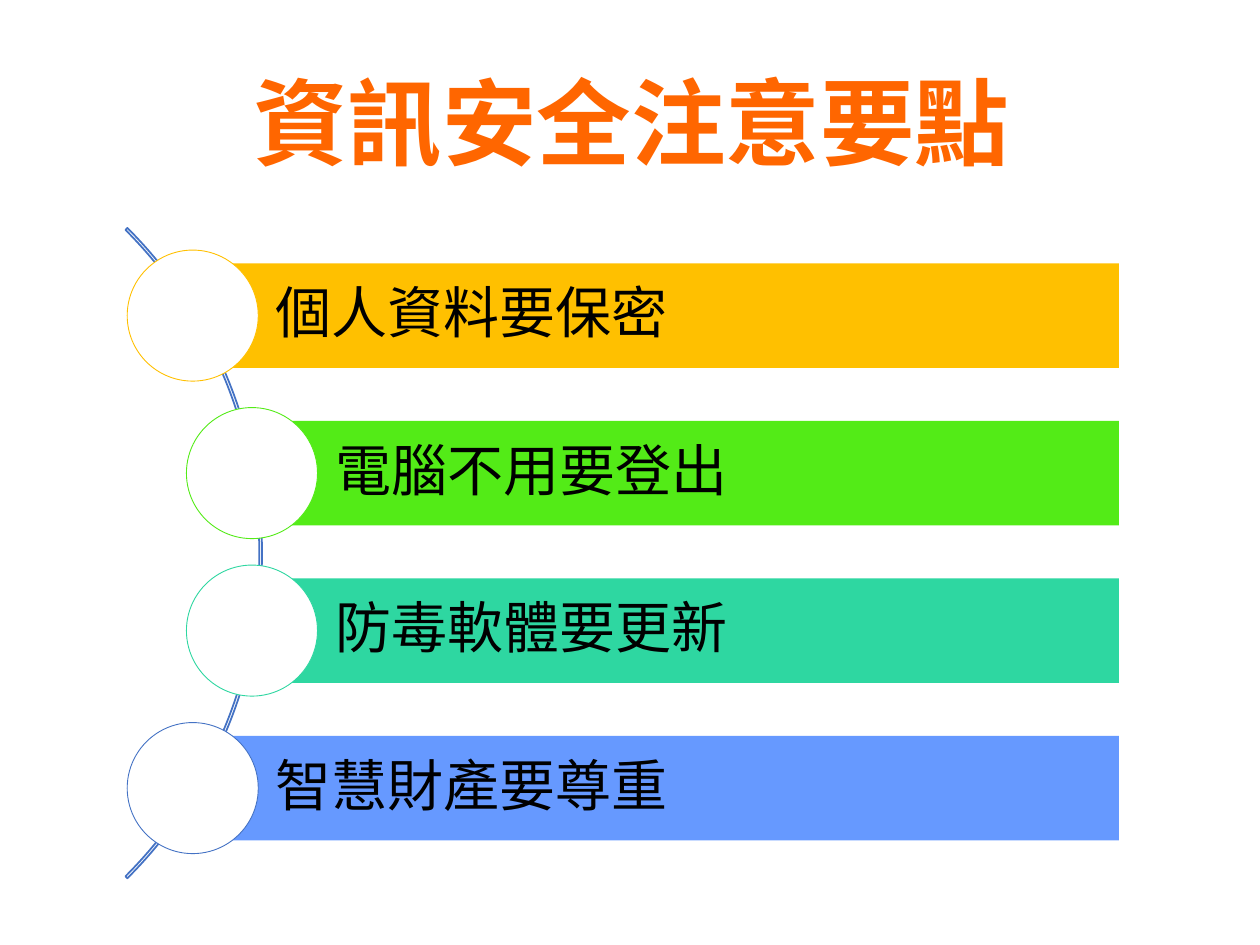
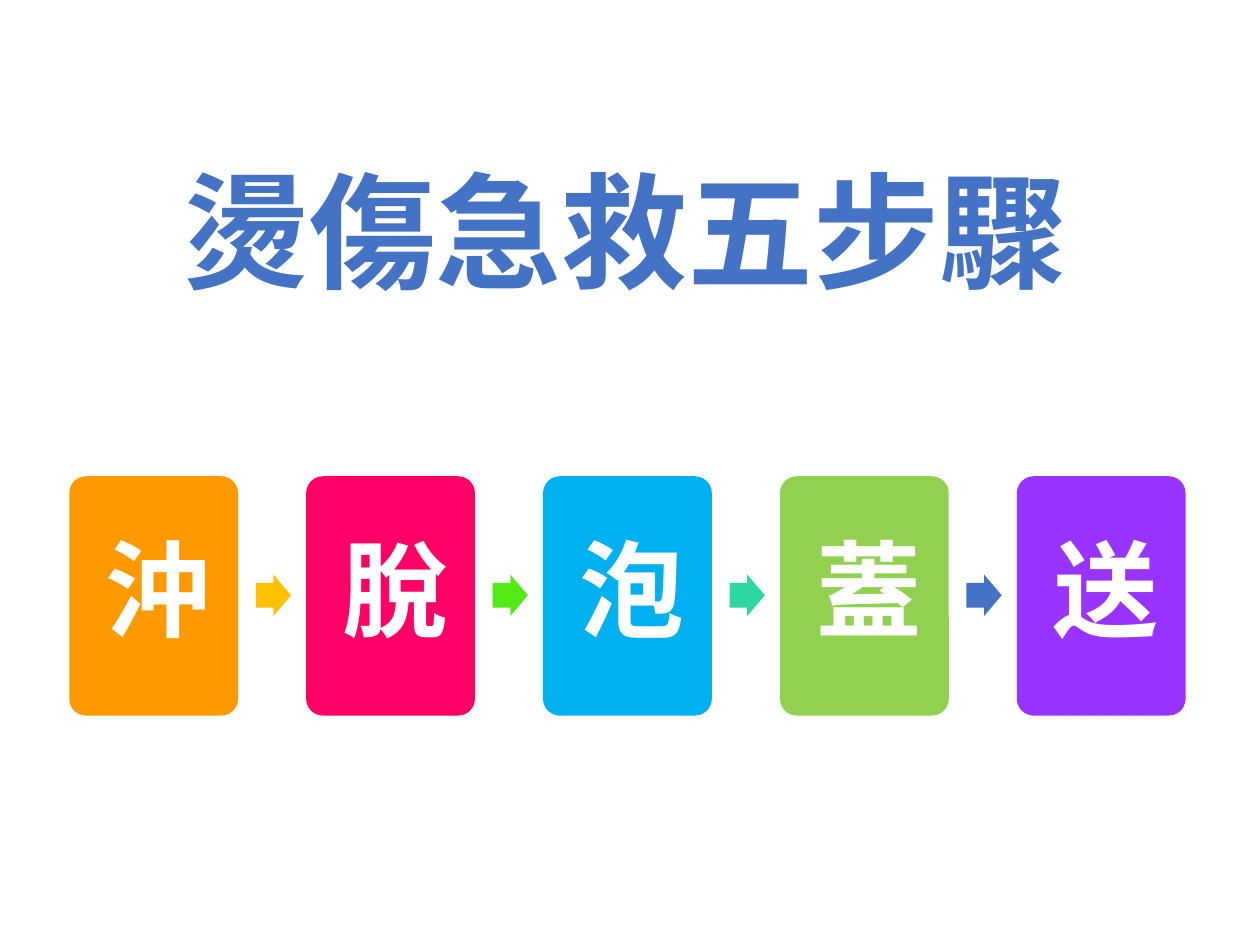
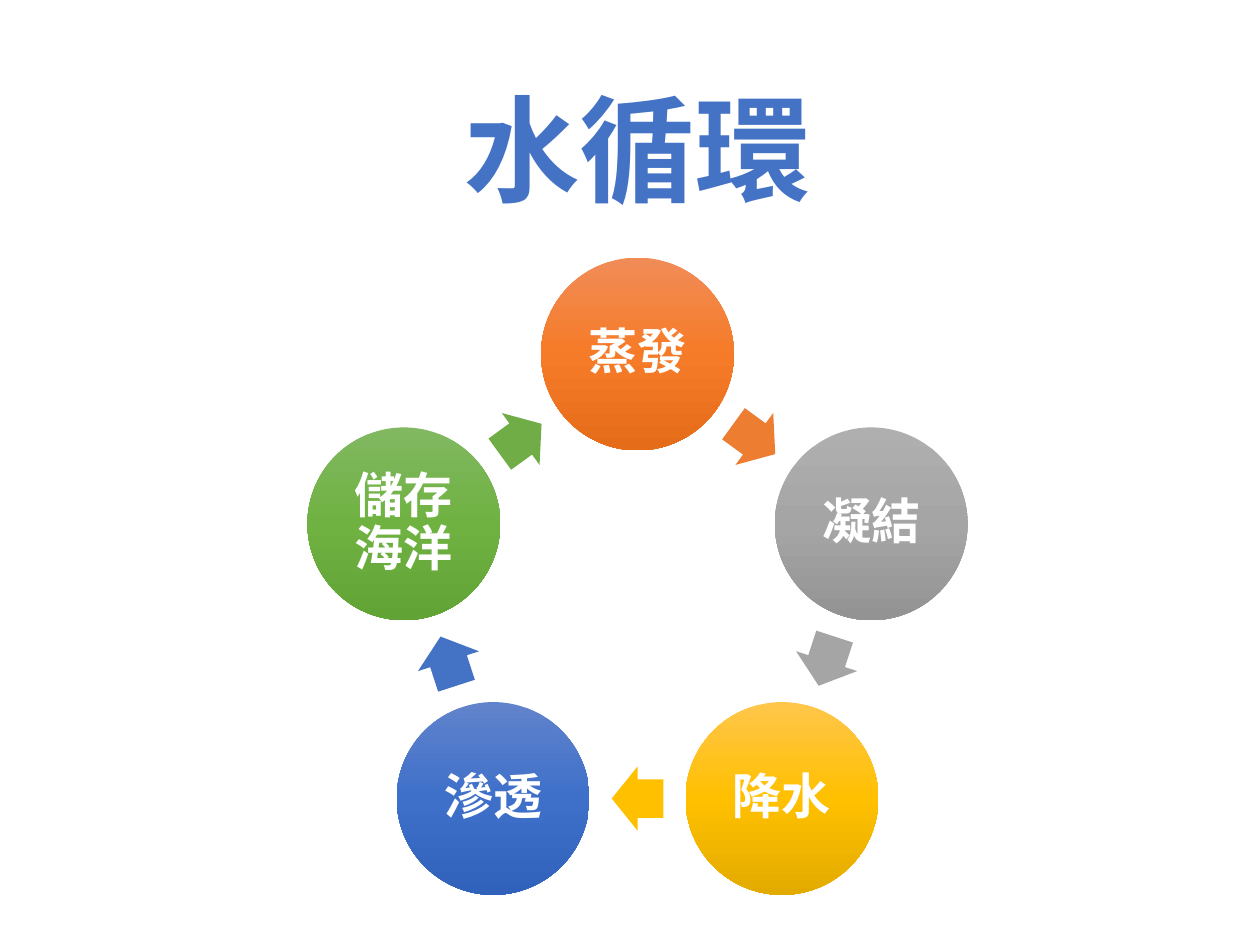
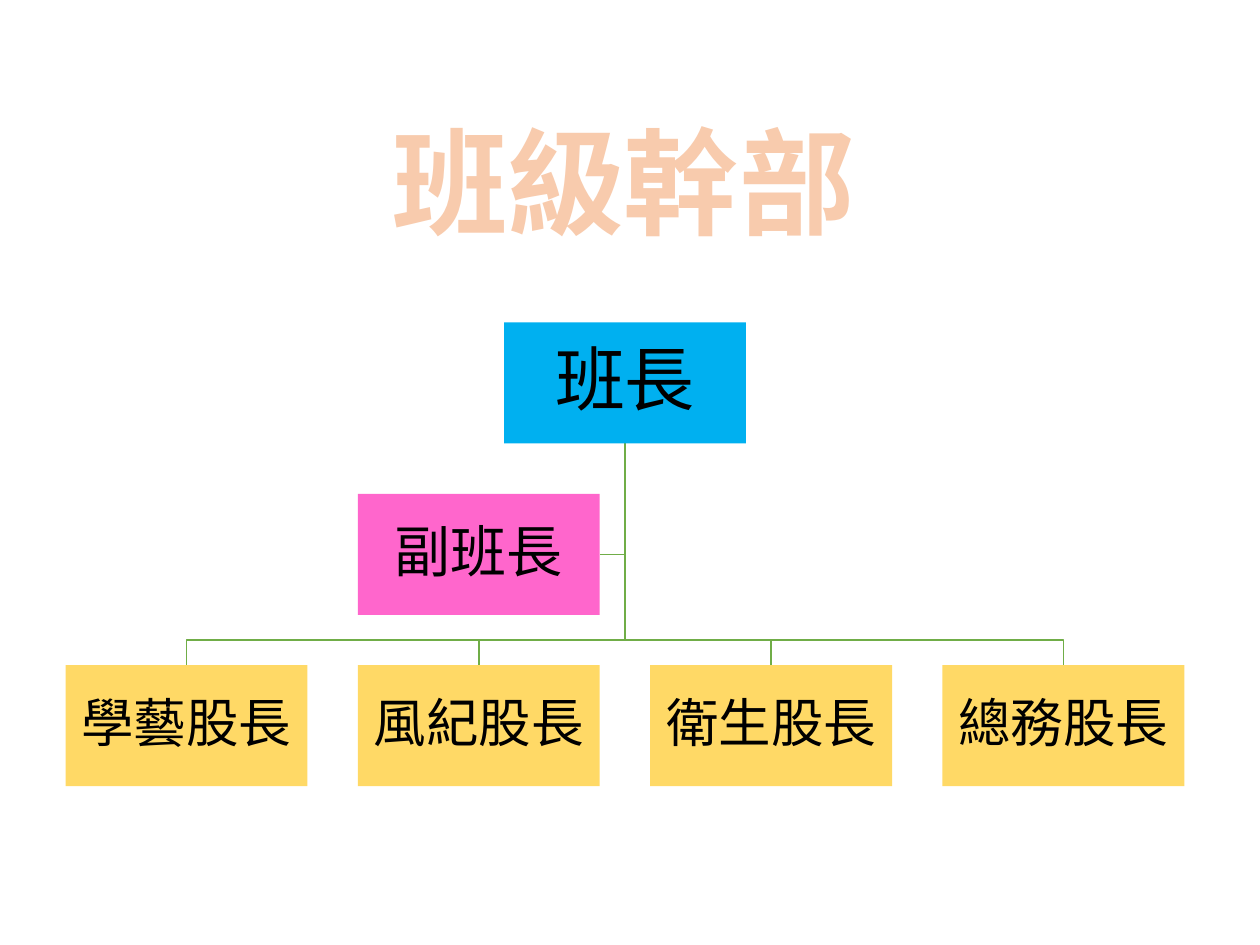
from dataclasses import dataclass
from math import cos, radians, sin
from typing import NamedTuple

from lxml import etree
from pptx import Presentation
from pptx.dml.color import RGBColor
from pptx.enum.shapes import MSO_SHAPE
from pptx.enum.text import MSO_ANCHOR, MSO_AUTO_SIZE, PP_ALIGN
from pptx.oxml.ns import qn
from pptx.util import Inches, Pt

RECT, OVAL, ROUND = MSO_SHAPE.RECTANGLE, MSO_SHAPE.OVAL, MSO_SHAPE.ROUNDED_RECTANGLE
ARROW, ARC = MSO_SHAPE.RIGHT_ARROW, MSO_SHAPE.BLOCK_ARC
LEFT, CENTER = PP_ALIGN.LEFT, PP_ALIGN.CENTER
MIDDLE, GROW = MSO_ANCHOR.MIDDLE, MSO_AUTO_SIZE.SHAPE_TO_FIT_TEXT


# Theme shared by all slides
@dataclass(frozen=True)
class Theme:
    font: str = "Noto Sans CJK SC"
    black: str = "000000"
    white: str = "FFFFFF"
    blue: str = "4472C4"
    gold: str = "FFC000"
    lime: str = "53EB17"
    teal: str = "2ED7A1"
    periwinkle: str = "6699FF"
    title_orange: str = "FF6600"
    orange: str = "ED7D31"
    peach: str = "F8CBAD"
    gray: str = "A5A5A5"
    green: str = "70AD47"
    sky: str = "00B0F0"
    amber: str = "FF9900"
    rose: str = "FF0066"
    grass: str = "92D050"
    violet: str = "9933FF"
    yellow: str = "FFD966"
    pink: str = "FF66CC"
    title_fade: tuple = ("203864", "4472C4", "8FAADC")
    size_bar: int = 32
    size_step: int = 60
    size_stage: int = 28
    size_chief: int = 40
    size_deputy: int = 32
    size_officer: int = 30


T = Theme()


class Box(NamedTuple):
    x: float
    y: float
    w: float
    h: float

    def emu(self) -> list:
        return [Inches(v) for v in self]


class Outline(NamedTuple):
    color: str
    width: float


class Style(NamedTuple):
    size: float
    color: str | tuple
    bold: bool = False
    outline: Outline | None = None


class Title(NamedTuple):
    text: str
    box: Box
    style: Style
    wrap: bool = True


class Bar(NamedTuple):
    text: str
    x: float
    color: str
    ring: str


class Step(NamedTuple):
    text: str
    color: str
    arrow: str | None


class Stage(NamedTuple):
    text: str
    fade: tuple
    arrow: str


class Post(NamedTuple):
    text: str
    x: float
    y: float
    color: str
    size: int


# Drawing helpers
def gradient(colors: tuple):
    """Vertical gradient fill with evenly spaced stops."""
    grad = etree.Element(qn("a:gradFill"), rotWithShape="1")
    stops = etree.SubElement(grad, qn("a:gsLst"))
    for i, color in enumerate(colors):
        gs = etree.SubElement(stops, qn("a:gs"), pos=str(100000 * i // (len(colors) - 1)))
        etree.SubElement(gs, qn("a:srgbClr"), val=color)
    etree.SubElement(grad, qn("a:lin"), ang="5400000", scaled="0")
    return grad


def write(tf, text: str, style: Style, align=CENTER, spacing: float | None = None) -> None:
    p = tf.paragraphs[0]
    p.alignment, p.line_spacing = align, spacing
    r = p.add_run()
    r.text = text
    for name, value in {"size": Pt(style.size), "bold": style.bold, "name": T.font}.items():
        setattr(r.font, name, value)
    rpr = r._r.get_or_add_rPr()
    etree.SubElement(rpr, qn("a:ea"), typeface=T.font)
    if isinstance(style.color, tuple):
        rpr.insert(0, gradient(style.color))
    else:
        r.font.color.rgb = RGBColor.from_string(style.color)
    if style.outline:
        ln = etree.Element(qn("a:ln"), w=str(Pt(style.outline.width)))
        fill = etree.SubElement(ln, qn("a:solidFill"))
        etree.SubElement(fill, qn("a:srgbClr"), val=style.outline.color)
        rpr.insert(0, ln)


def paint(sp, fill: str | tuple | None, line: Outline | None) -> None:
    sp.shadow.inherit = False
    if isinstance(fill, tuple):
        sp._element.spPr.find(qn("a:prstGeom")).addnext(gradient(fill))
    elif fill:
        sp.fill.solid()
        sp.fill.fore_color.rgb = RGBColor.from_string(fill)
    else:
        sp.fill.background()
    if line:
        sp.line.color.rgb = RGBColor.from_string(line.color)
        sp.line.width = Pt(line.width)
    else:
        sp.line.fill.background()


def add_shape(slide, kind, box: Box, fill=None, line: Outline | None = None,
              adj: tuple = (), rotation: float = 0):
    sp = slide.shapes.add_shape(kind, *box.emu())
    paint(sp, fill, line)
    sp.rotation = rotation
    for i, value in enumerate(adj):
        sp.adjustments[i] = value
    return sp


def label(sp, text: str, style: Style, inset: float, left: float | None = None,
          align=CENTER) -> None:
    tf = sp.text_frame
    settings = {
        "word_wrap": True, "vertical_anchor": MIDDLE,
        "margin_left": Inches(inset if left is None else left),
        "margin_top": Inches(inset), "margin_right": Inches(inset),
        "margin_bottom": Inches(inset),
    }
    for name, value in settings.items():
        setattr(tf, name, value)
    write(tf, text, style, align, 0.9)


def add_arrow(slide, box: Box, color: str, rotation: float = 0) -> None:
    add_shape(slide, ARROW, box, color, adj=(0.6, 0.5), rotation=rotation)


def add_title(slide, title: Title) -> None:
    tf = slide.shapes.add_textbox(*title.box.emu()).text_frame
    tf.word_wrap = title.wrap
    tf.auto_size = GROW
    write(tf, title.text, title.style)


def add_path(slide, points: list, line: Outline) -> None:
    start, *rest = [(Inches(x), Inches(y)) for x, y in points]
    builder = slide.shapes.build_freeform(*start)
    builder.add_line_segments(rest, close=False)
    paint(builder.convert_to_shape(), None, line)


# Slide 1: bars hung on an arc
def security_slide(slide) -> None:
    bars = [
        Bar("個人資料要保密", 1.53, T.gold, T.gold),
        Bar("電腦不用要登出", 2, T.lime, T.lime),
        Bar("防毒軟體要更新", 2, T.teal, T.teal),
        Bar("智慧財產要尊重", 1.53, T.periwinkle, T.blue),
    ]
    top, pitch, height, right, disc = 2.09, 1.25, 0.83, 8.88, 1.04
    add_shape(slide, ARC, Box(-5.22, 0.74, 7.3, 7.3), line=Outline(T.blue, 1),
              adj=(189, 27, 0.003))
    for i, bar in enumerate(bars):
        y = top + i * pitch
        sp = add_shape(slide, RECT, Box(bar.x, y, right - bar.x, height), bar.color)
        label(sp, bar.text, Style(T.size_bar, T.black), 0.09, 0.66, LEFT)
        add_shape(slide, OVAL, Box(bar.x - disc / 2, y + (height - disc) / 2, disc, disc),
                  T.white, Outline(bar.ring, 0.5))
    add_title(slide, Title("資訊安全注意要點", Box(1.66, 0.46, 6.7, 1.01),
                           Style(54, T.title_orange, True)))


# Slide 2: five cards joined by arrows
def burn_slide(slide) -> None:
    steps = [
        Step("沖", T.amber, T.gold),
        Step("脫", T.rose, T.lime),
        Step("泡", T.sky, T.teal),
        Step("蓋", T.grass, T.blue),
        Step("送", T.violet, None),
    ]
    left, pitch = 0.55, 1.88
    add_title(slide, Title("燙傷急救五步驟", Box(1.32, 1.17, 7.27, 1.31),
                           Style(72, T.blue, True, Outline(T.white, 0.75)), wrap=False))
    for i, step in enumerate(steps):
        x = left + i * pitch
        sp = add_shape(slide, ROUND, Box(x, 3.78, 1.34, 1.9), step.color, adj=(0.1,))
        label(sp, step.text, Style(T.size_step, T.white, True), 0.25)
        if step.arrow:
            add_arrow(slide, Box(x + 1.48, 4.56, 0.28, 0.33), step.arrow)


# Slide 3: stages on a ring, clockwise from the top
def water_slide(slide) -> None:
    stages = [
        Stage("蒸發", ("F18C57", "F67B28", "E56C19"), T.orange),
        Stage("凝結", ("AFAFAF", "A5A5A5", "939393"), T.gray),
        Stage("降水", ("FFC64B", "FFC000", "E3AB00"), T.gold),
        Stage("滲透", ("6183CB", "3E70CA", "3062BB"), T.blue),
        Stage("儲存海洋", ("81B861", "6FB242", "62A336"), T.green),
    ]
    cx, cy, radius, disc = 5.06, 4.76, 1.95, 1.53
    turn = 360 / len(stages)
    arrow_radius = radius * cos(radians(turn / 2))

    def on_ring(angle: float, r: float, w: float, h: float) -> Box:
        a = radians(angle)
        return Box(cx + r * sin(a) - w / 2, cy - r * cos(a) - h / 2, w, h)

    for i, stage in enumerate(stages):
        angle = i * turn
        sp = add_shape(slide, OVAL, on_ring(angle, radius, disc, disc), stage.fade)
        label(sp, stage.text, Style(T.size_stage, T.white, True), 0.04)
        between = angle + turn / 2
        add_arrow(slide, on_ring(between, arrow_radius, 0.41, 0.51), stage.arrow, between)
    add_title(slide, Title("水循環", Box(3.57, 0.57, 2.98, 1.21),
                           Style(66, T.title_fade, True), wrap=False))


# Slide 4: organisation chart
def class_slide(slide) -> None:
    w, h, pitch, bus_y = 1.92, 0.96, 2.32, 5.08
    chief = Post("班長", 4, 2.56, T.sky, T.size_chief)
    deputy = Post("副班長", 2.84, 3.92, T.pink, T.size_deputy)
    names = ["學藝股長", "風紀股長", "衛生股長", "總務股長"]
    officers = [Post(name, 0.52 + i * pitch, 5.28, T.yellow, T.size_officer)
                for i, name in enumerate(names)]

    trunk_x, trunk_y, deputy_y = chief.x + w / 2, chief.y + h, deputy.y + h / 2
    routes = [[(trunk_x, deputy_y), (deputy.x + w, deputy_y)]]
    routes += [[(trunk_x, bus_y), (post.x + w / 2, bus_y), (post.x + w / 2, post.y)]
               for post in officers]
    for route in routes:
        add_path(slide, [(trunk_x, trunk_y), *route], Outline(T.green, 1))
    for post in [chief, *officers, deputy]:
        sp = add_shape(slide, RECT, Box(post.x, post.y, w, h), post.color)
        label(sp, post.text, Style(post.size, T.black), 0.02)
    add_title(slide, Title("班級幹部", Box(1.6, 0.83, 6.7, 1.21),
                           Style(66, T.peach, True, Outline(T.orange, 1.75))))


def main() -> None:
    prs = Presentation()
    prs.slide_width, prs.slide_height = Inches(10), Inches(7.5)
    blank = prs.slide_layouts[6]
    for draw in (security_slide, burn_slide, water_slide, class_slide):
        draw(prs.slides.add_slide(blank))
    prs.save("out.pptx")


if __name__ == "__main__":
    main()
